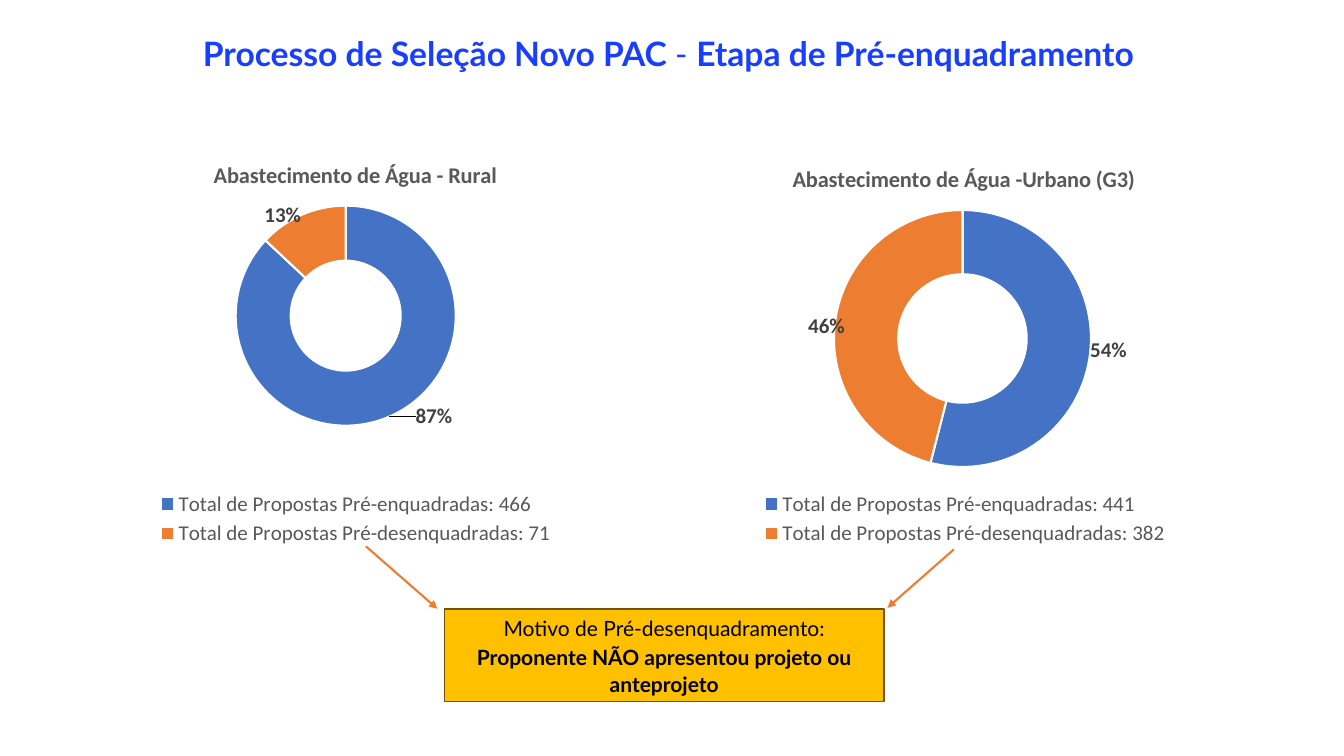
from dataclasses import dataclass

from lxml import etree
from pptx import Presentation
from pptx.chart.data import CategoryChartData
from pptx.dml.color import RGBColor
from pptx.enum.chart import XL_CHART_TYPE as ChartType, XL_LEGEND_POSITION as LegendPosition
from pptx.enum.shapes import MSO_CONNECTOR as Connector, MSO_SHAPE as ShapeType
from pptx.enum.text import MSO_ANCHOR as Anchor, MSO_AUTO_SIZE as AutoSize, PP_ALIGN as Align
from pptx.oxml.ns import qn
from pptx.util import Inches, Pt


@dataclass(frozen=True)
class Theme:
    text_font: str = "Lato"
    chart_font: str = "Calibri"
    title: str = "183EFF"
    text: str = "000000"
    chart_text: str = "595959"
    label: str = "404040"
    box: str = "FFC000"
    box_line: str = "705400"
    accepted: str = "4472C4"
    rejected: str = "ED7D31"
    gap: str = "FFFFFF"
    title_size: int = 24
    chart_title_size: int = 16
    body_size: int = 15


THEME = Theme()
WIDTH, HEIGHT = Inches(13.33), Inches(7.5)
COLUMNS, ROWS = 40, 30  # grid cells of about a third and a quarter of an inch


def grid(column, row):
    return round(WIDTH * column / COLUMNS), round(HEIGHT * row / ROWS)


def color(value):
    return RGBColor.from_string(value)


def style_font(font, size, fill, name, bold=False):
    font.size, font.bold, font.name = Pt(size), bold, name
    font.color.rgb = color(fill)


def add_text(paragraph, text, size=THEME.body_size, fill=THEME.text,
             name=THEME.text_font, bold=False):
    run = paragraph.add_run()
    run.text = text
    style_font(run.font, size, fill, name, bold)


def set_layout(parent, index, **settings):
    """Give a chart part a manual layout, placed at the index its schema needs."""
    for old in parent.findall(qn("c:layout")):
        parent.remove(old)
    layout = etree.Element(qn("c:layout"))
    manual = etree.SubElement(layout, qn("c:manualLayout"))
    for key, value in settings.items():
        etree.SubElement(manual, qn(f"c:{key}")).set("val", str(value))
    parent.insert(index, layout)


def add_title(slide, parts):
    title = slide.shapes.title
    title.left, title.top = grid(0.93, 1.12)
    title.width, title.height = grid(37.93, 2)
    frame = title.text_frame
    frame.auto_size, frame.vertical_anchor = AutoSize.NONE, Anchor.MIDDLE
    paragraph = frame.paragraphs[0]
    paragraph.alignment = Align.CENTER
    for text, bold in parts:
        add_text(paragraph, text, size=THEME.title_size, fill=THEME.title, bold=bold)


def add_doughnut(slide, place, size, heading, heading_at, plot, counts, shares, offsets):
    data = CategoryChartData(number_format="0%")
    names = ("Pré-enquadradas", "Pré-desenquadradas")
    data.categories = [f"Total de Propostas {name}: {count}"
                       for name, count in zip(names, counts)]
    data.add_series("Series 1", shares)
    chart = slide.shapes.add_chart(
        ChartType.DOUGHNUT, *grid(*place), *grid(*size), data).chart
    style_font(chart.font, 10, THEME.text, THEME.chart_font)

    # Heading and legend
    chart.has_title = True
    add_text(chart.chart_title.text_frame.paragraphs[0], heading, bold=True,
             size=THEME.chart_title_size, fill=THEME.chart_text, name=THEME.chart_font)
    chart.has_legend = True
    chart.legend.position = LegendPosition.BOTTOM
    chart.legend.include_in_layout = False
    style_font(chart.legend.font, THEME.body_size, THEME.chart_text, THEME.chart_font)

    # Ring segments and their labels
    chart.plots[0].vary_by_categories = True
    series = chart.plots[0].series[0]
    labels = series.data_labels
    labels.show_value = True
    labels.number_format, labels.number_format_is_linked = "0%", False
    style_font(labels.font, THEME.body_size, THEME.label, THEME.chart_font, True)
    for index, fill in enumerate((THEME.accepted, THEME.rejected)):
        point = series.points[index]
        point.format.fill.solid()
        point.format.fill.fore_color.rgb = color(fill)
        point.format.line.color.rgb = color(THEME.gap)
        point.format.line.width = Pt(1.5)
        style_font(point.data_label.font, THEME.body_size, THEME.label,
                   THEME.chart_font, True)

    # Positions inside the chart
    root = chart.element
    root.xpath(".//c:holeSize")[0].set("val", "75")
    edges = {"xMode": "edge", "yMode": "edge"}
    set_layout(root.xpath(".//c:title")[0], 1, **edges, x=heading_at[0], y=heading_at[1])
    set_layout(root.xpath(".//c:plotArea")[0], 0, layoutTarget="inner", **edges,
               **dict(zip("xywh", plot)))
    for label, (x, y) in zip(root.xpath(".//c:dLbl"), offsets):
        set_layout(label, 1, x=x, y=y)


def add_reason_box(slide, place, size, lines):
    box = slide.shapes.add_shape(ShapeType.RECTANGLE, *grid(*place), *grid(*size))
    box.shadow.inherit = False
    box.fill.solid()
    box.fill.fore_color.rgb = color(THEME.box)
    box.line.color.rgb = color(THEME.box_line)
    box.line.width = Pt(1)
    frame = box.text_frame
    frame.word_wrap, frame.vertical_anchor = True, Anchor.MIDDLE
    for index, (text, bold) in enumerate(lines):
        paragraph = frame.add_paragraph() if index else frame.paragraphs[0]
        paragraph.alignment = Align.CENTER
        paragraph.line_spacing = 1.07
        paragraph.space_before = Pt(1 if index else 0)
        paragraph.space_after = Pt(1)
        add_text(paragraph, text, bold=bold)


def add_arrow(slide, tip, origin):
    arrow = slide.shapes.add_connector(Connector.STRAIGHT, *grid(*tip), *grid(*origin))
    arrow.line.color.rgb = color(THEME.rejected)
    arrow.line.width = Pt(1.5)
    etree.SubElement(arrow.line._get_or_add_ln(), qn("a:headEnd")).set("type", "triangle")
    etree.SubElement(arrow._element.spPr, qn("a:effectLst"))


def main():
    presentation = Presentation()
    presentation.slide_width, presentation.slide_height = WIDTH, HEIGHT
    slide = presentation.slides.add_slide(presentation.slide_layouts[5])

    add_title(slide, [("Processo de Seleção Novo PAC ", True), ("- ", False),
                      ("Etapa de Pré-enquadramento", True)])

    # Reason shared by both rejected groups
    add_reason_box(slide, (13.23, 24.16), (13.08, 3.68), [
        ("Motivo de Pré-desenquadramento:", False),
        ("Proponente NÃO apresentou projeto ou anteprojeto", True)])

    # Rural and urban results
    add_doughnut(slide, (3.09, 5.36), (15, 16.48), "Abastecimento de Água - Rural",
                 (0.21, 0.05), (0.26, 0.17, 0.44, 0.53), (466, 71), (0.87, 0.13),
                 [(0.11, 0.06), (-0.06, -0.06)])
    add_doughnut(slide, (21.22, 5.52), (15, 16.32), "Abastecimento de Água -Urbano (G3)",
                 (0.15, 0.05), (0.24, 0.17, 0.51, 0.63), (441, 382), (0.54, 0.46),
                 [(0.1, 0), (-0.08, 0)])

    # Arrows from the legends to the reason
    for tip, origin in (((26.41, 24.12), (28.39, 21.8)), ((13.02, 24.16), (10.89, 21.68))):
        add_arrow(slide, tip, origin)

    presentation.save("out.pptx")


if __name__ == "__main__":
    main()
